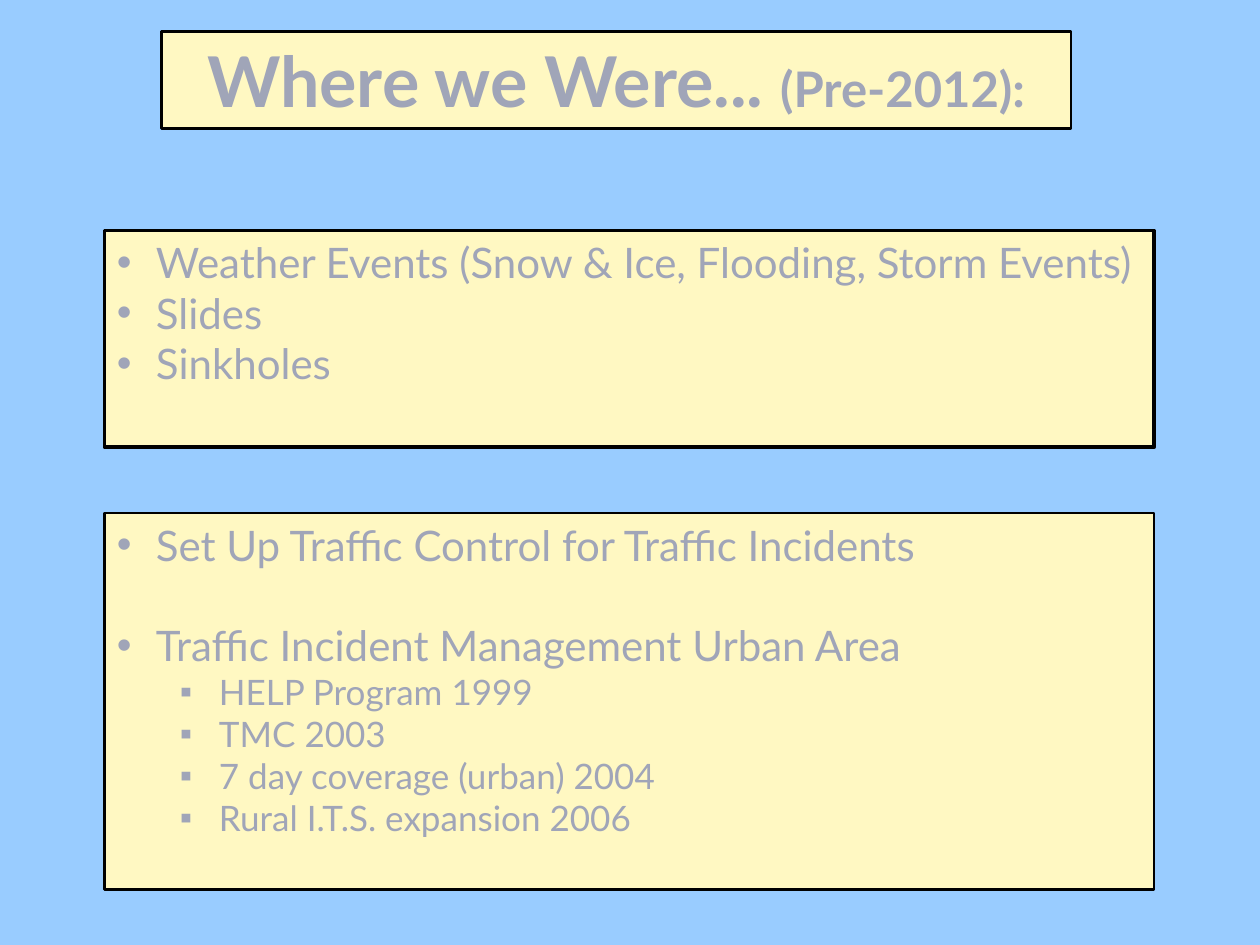
from lxml import etree
from pptx import Presentation
from pptx.dml.color import RGBColor
from pptx.enum import shapes, text
from pptx.oxml import ns
from pptx.util import Inches, Pt

FONT, INK, CREAM, SKY, BLACK = "Lato", "A0A5B8", "FFF8C2", "99CCFF", "000000"
LEFT, WIDE = 0.83, 8.33
INDENT = 0.31
LEVELS = [("•", 24, INDENT), ("▪", 20, INDENT + 0.5)]  # mark, size, margin


def color(code):
    return RGBColor.from_string(code)


def write(para, words, size, bold=False):
    run = para.add_run()
    run.text = words
    font = run.font
    font.name, font.size, font.bold = FONT, Pt(size), bold
    font.color.rgb = color(INK)


def panel(shape, box, line):
    """Place a shape and give it the cream fill and black border."""
    shape.left, shape.top, shape.width, shape.height = map(Inches, box)
    shape.fill.solid()
    shape.fill.fore_color.rgb = color(CREAM)
    shape.line.color.rgb = color(BLACK)
    shape.line.width = Pt(line)
    shape.text_frame.auto_size = text.MSO_AUTO_SIZE.NONE


def bullet(para, level):
    mark, _, margin = LEVELS[level]
    para.level = level
    para.alignment = text.PP_ALIGN.LEFT
    props = para._p.get_or_add_pPr()
    props.set("marL", str(Inches(margin)))
    props.set("indent", str(-Inches(INDENT)))
    etree.SubElement(props, ns.qn("a:buFont")).set("typeface", "Arial")
    etree.SubElement(props, ns.qn("a:buChar")).set("char", mark)


def heading(slide, box):
    title = slide.shapes.title
    panel(title, box, 1.5)
    frame = title.text_frame
    frame.word_wrap = False
    frame.vertical_anchor = text.MSO_ANCHOR.TOP
    para = frame.paragraphs[0]
    para.alignment = text.PP_ALIGN.CENTER
    write(para, "Where we Were... ", 40, bold=True)
    write(para, "(Pre-2012):", 28, bold=True)


def listing(slide, box, line, items):
    """Bulleted panel; each item is words, level and space before in points."""
    shape = slide.shapes.add_shape(shapes.MSO_SHAPE.RECTANGLE, *map(Inches, box))
    shape.shadow.inherit = False
    panel(shape, box, line)
    frame = shape.text_frame
    frame.word_wrap = True
    frame.vertical_anchor = text.MSO_ANCHOR.TOP
    for i, (words, level, gap) in enumerate(items):
        para = frame.add_paragraph() if i else frame.paragraphs[0]
        bullet(para, level)
        if gap:
            para.space_before = Pt(gap)
        write(para, words, LEVELS[level][1])


def main():
    deck = Presentation()
    deck.slide_width, deck.slide_height = Inches(10), Inches(7.5)
    slide = deck.slides.add_slide(deck.slide_layouts[5])
    slide.background.fill.solid()
    slide.background.fill.fore_color.rgb = color(SKY)

    heading(slide, (1.28, 0.25, 7.22, 0.77))
    listing(slide, (LEFT, 1.83, WIDE, 1.72), 2, [
        ("Weather Events (Snow & Ice, Flooding, Storm Events)", 0, 0),
        ("Slides", 0, 0),
        ("Sinkholes", 0, 0),
    ])
    listing(slide, (LEFT, 4.07, WIDE, 2.99), 1.5, [
        ("Set Up Traffic Control for Traffic Incidents", 0, 0),
        ("Traffic Incident Management Urban Area", 0, 28.8),
        ("HELP Program 1999", 1, 0),
        ("TMC 2003", 1, 0),
        ("7 day coverage (urban) 2004", 1, 0),
        ("Rural I.T.S. expansion 2006", 1, 0),
    ])
    deck.save("out.pptx")


if __name__ == "__main__":
    main()
